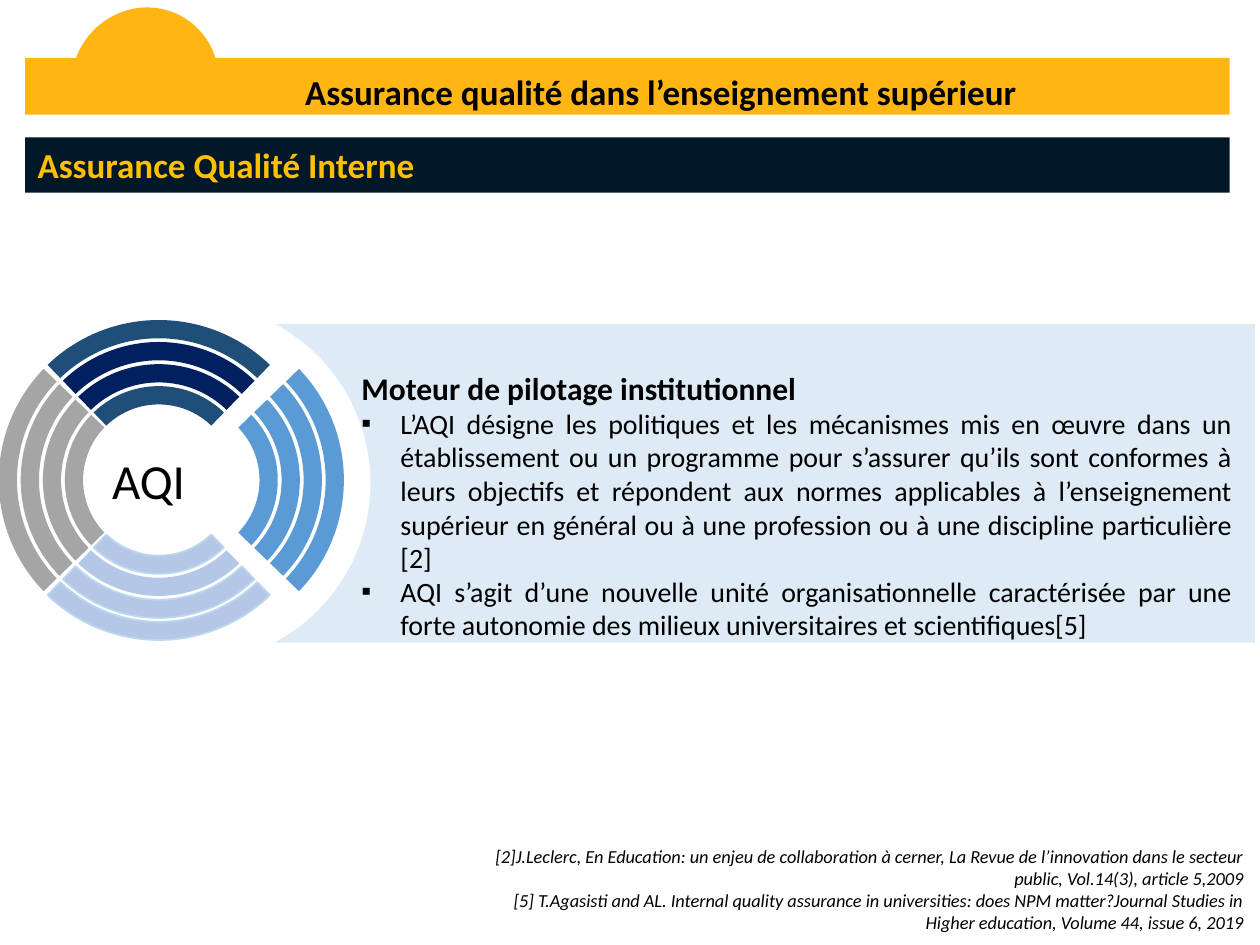
import math
from pptx import Presentation, util as u
from pptx.dml.color import RGBColor
from pptx.enum import shapes, text
from pptx.oxml.ns import qn
from lxml import etree

# Grid of 100 columns by 75 rows
UNIT = u.Inches(0.1)
LEFT, CENTER, RIGHT, JUSTIFY = (text.PP_ALIGN.LEFT, text.PP_ALIGN.CENTER,
                                text.PP_ALIGN.RIGHT, text.PP_ALIGN.JUSTIFY)


def paint(shape, fill=None, line=None):
    """Set fill and outline from hex strings, None meaning absent."""
    shape.shadow.inherit = False
    for part, colour in ((shape.fill, fill), (shape.line.fill, line)):
        if colour:
            part.solid()
            part.fore_color.rgb = RGBColor.from_string(colour)
        else:
            part.background()
    if line:
        shape.line.width = u.Pt(1)


def write(box, words, size, colour="000000", bold=False, italic=False,
          align=LEFT, bullet=None, anchor=text.MSO_ANCHOR.TOP):
    """Add one paragraph to a box, using its empty first one if there is one."""
    frame = box.text_frame
    frame.word_wrap = True
    frame.vertical_anchor = anchor
    para = frame.paragraphs[0] if not frame.text else frame.add_paragraph()
    para.alignment = align
    span = para.add_run()
    span.text = words
    span.font.name = "Calibri"
    span.font.size = u.Pt(size)
    span.font.bold, span.font.italic = bold, italic
    span.font.color.rgb = RGBColor.from_string(colour)
    if bullet:
        properties = para._p.get_or_add_pPr()
        indent = int(3.1 * UNIT)
        properties.set("marL", str(indent))
        properties.set("indent", str(-indent))
        etree.SubElement(properties, qn("a:buFont")).set("typeface", "Arial")
        etree.SubElement(properties, qn("a:buChar")).set("char", bullet)


deck = Presentation()
deck.slide_width, deck.slide_height = 100 * UNIT, 75 * UNIT
page = deck.slides.add_slide(deck.slide_layouts[6])

# Outlines: fill, line, corners, and arcs as {side: (radius, start, sweep)}
outlines = []

# Four quadrants of four concentric bands: centre column, direction, fills, lines
quadrants = [
    (12.6, 270, ["1F4E79", "002060", "002060", "1F4E79"], [None] * 4),
    (14.6, 0, ["5B9BD5"] * 4, [None] * 4),
    (12.6, 90, ["B4C7E7"] * 4, ["BDD7EE", "BDD7EE", None, "BDD7EE"]),
    (12.6, 180, ["A5A5A5"] * 4, [None] * 4),
]
HALF_ANGLE, CENTRE_ROW = 44, 38.1
for centre, direction, fills, lines in quadrants:
    first, last = direction - HALF_ANGLE, direction + HALF_ANGLE
    for ring, (fill, line) in enumerate(zip(fills, lines)):
        outer = 12.7 - 1.75 * ring
        inner = outer - 1.45
        edges = [(outer, first), (outer, direction), (outer, last),
                 (inner, last), (inner, first)]
        corners = [(centre + radius * math.cos(math.radians(angle)),
                    CENTRE_ROW + radius * math.sin(math.radians(angle)))
                   for radius, angle in edges]
        arcs = {0: (outer, first, HALF_ANGLE), 1: (outer, direction, HALF_ANGLE),
                3: (inner, last, -2 * HALF_ANGLE)}
        outlines.append((fill, line, corners, arcs))

# Pale panel whose left side curves around the ring
outlines.append(("DEEBF7", None,
                 [(21.8, 25.7), (99.6, 25.7), (99.6, 51), (21.8, 51), (21.8, 25.7)],
                 {3: (14.33, 62, -124)}))

for fill, line, corners, arcs in outlines:
    points = [(x * UNIT, y * UNIT) for x, y in corners]
    builder = page.shapes.build_freeform(*points[0])
    builder.add_line_segments(points[1:], close=True)
    outline = builder.convert_to_shape()
    paint(outline, fill, line)
    sides = list(outline._element.iter(qn("a:lnTo")))
    for side, (radius, start, sweep) in arcs.items():
        arc = etree.Element(qn("a:arcTo"))
        arc.set("wR", str(int(radius * UNIT)))
        arc.set("hR", str(int(radius * UNIT)))
        arc.set("stAng", str(start % 360 * 60000))
        arc.set("swAng", str(sweep * 60000))
        sides[side].getparent().replace(sides[side], arc)

# Boxes: preset (None for a text box), fill, left, top, width, height
kind = shapes.MSO_SHAPE
areas = {
    "title bar": (kind.RECTANGLE, "FFB612", 2, 4.6, 95.6, 4.5),
    "sun": (kind.CHORD, "FFB612", 5.4, 0.8, 12.2, 11.7),
    "title": (None, None, 21.9, 5.1, 61.1, 4.4),
    "section": (kind.RECTANGLE, "001828", 2, 10.9, 95.6, 4.4),
    "hub": (kind.OVAL, None, 4.7, 30.9, 16, 14.4),
    "body": (None, None, 27.7, 25.7, 71.1, 32.3),
    "references": (None, None, 37.1, 66.6, 62.6, 8.1),
}
boxes = {}
for name, (preset, fill, *place) in areas.items():
    place = [int(length * UNIT) for length in place]
    if preset is None:
        boxes[name] = page.shapes.add_textbox(*place)
    else:
        boxes[name] = page.shapes.add_shape(preset, *place)
        paint(boxes[name], fill)
boxes["sun"].rotation = 112.9
boxes["hub"].text_frame.margin_right = int(2.8 * UNIT)
boxes["body"].text_frame.margin_top = int(3.55 * UNIT)

write(boxes["title"], "Assurance qualité dans l’enseignement supérieur", 20,
      bold=True, align=CENTER)
write(boxes["section"], "Assurance Qualité Interne", 20, colour="FFC000", bold=True)
write(boxes["hub"], "AQI", 28, align=CENTER, anchor=text.MSO_ANCHOR.MIDDLE)

write(boxes["body"], "Moteur de pilotage institutionnel", 18, bold=True, align=JUSTIFY)
for point in (
    "L’AQI désigne les politiques et les mécanismes mis en œuvre dans un établissement "
    "ou un programme pour s’assurer qu’ils sont conformes à leurs objectifs et répondent "
    "aux normes applicables à l’enseignement supérieur en général ou à une profession ou "
    "à une discipline particulière [2]",
    "AQI s’agit d’une nouvelle unité organisationnelle caractérisée par une forte "
    "autonomie des milieux universitaires et scientifiques[5]",
):
    write(boxes["body"], point, 16, align=JUSTIFY, bullet="▪")

for reference in (
    "[2]J.Leclerc, En Education: un enjeu de collaboration à cerner, La Revue de "
    "l’innovation dans le secteur public, Vol.14(3), article 5,2009",
    "[5] T.Agasisti and AL. Internal quality assurance in universities: does NPM "
    "matter?Journal Studies in Higher education, Volume 44, issue 6, 2019",
):
    write(boxes["references"], reference, 10.5, italic=True, align=RIGHT)

deck.save("out.pptx")
